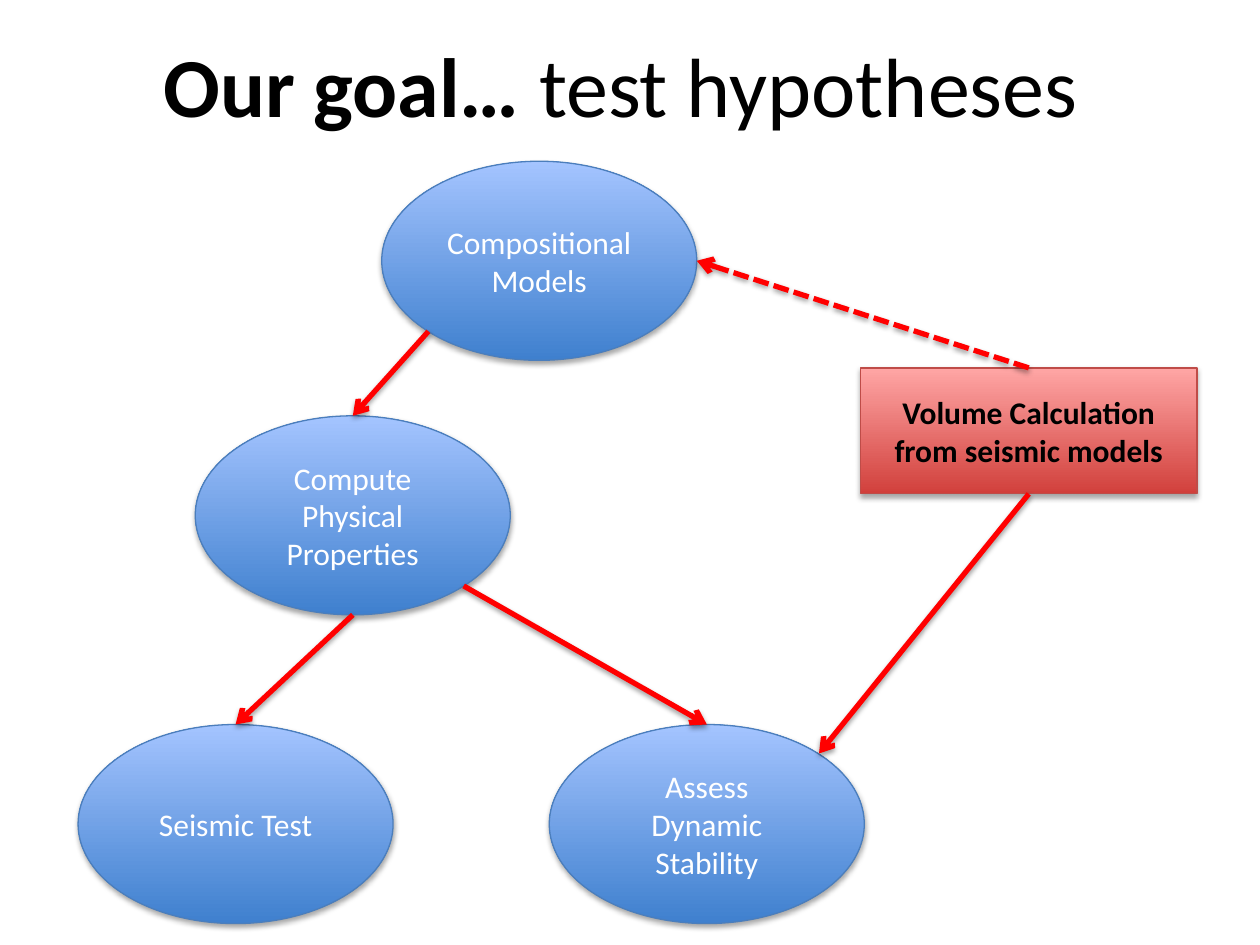
"""Build a slide with a flow chart of hypothesis testing."""
from dataclasses import dataclass
from typing import Optional

from pptx import Presentation, util as u
from pptx.dml.color import RGBColor
from pptx.enum import dml, shapes, text
from pptx.oxml import parse_xml
from pptx.oxml.ns import nsdecls

HUES = {"deep": "3F80CE", "pale": "A4C4FF", "edge": "4B7EBC",
        "brick": "D1403C", "rose": "FFA6A5", "rim": "BF4C48",
        "arrow": "FF0000", "white": "FFFFFF", "black": "000000"}
OVAL, BOX = shapes.MSO_SHAPE.OVAL, shapes.MSO_SHAPE.RECTANGLE


@dataclass
class Look:
    form: int
    size: tuple[float, float]
    grad: tuple[str, str]
    line: str
    font: dict


@dataclass
class Node:
    name: str
    words: str
    left: float
    top: float
    look: Look


@dataclass
class Link:
    start: tuple[float, float]
    stop: tuple[float, float]
    tail: Optional[tuple[str, int]] = None
    head: Optional[tuple[str, int]] = None
    dash: bool = False


STEP = Look(OVAL, (2.5, 1.58), ("deep", "pale"), "edge",
            {"size": u.Pt(18), "name": "Calibri", "bold": False, "hue": "white"})
NOTE = Look(BOX, (2.67, 1), ("brick", "rose"), "rim",
            {"size": u.Pt(18), "name": "Calibri", "bold": True, "hue": "black"})
HEAD = {"size": u.Pt(48), "name": "Calibri", "hue": "black"}

NODES = [
    Node("model", "Compositional\vModels", 3.03, 1.28, STEP),
    Node("props", "Compute Physical\nProperties", 1.55, 3.3, STEP),
    Node("assess", "Assess Dynamic Stability", 4.36, 5.75, STEP),
    Node("test", "Seismic Test", 0.62, 5.75, STEP),
    Node("volume", "Volume Calculation\nfrom seismic models", 6.83, 2.92, NOTE),
]
LINKS = [
    Link((3.4, 2.63), (2.8, 3.3), head=("props", 0)),
    Link((3.68, 4.65), (5.61, 5.75), head=("assess", 0)),
    Link((2.8, 4.88), (1.87, 5.75), head=("test", 0)),
    Link((8.17, 2.92), (5.53, 2.07), tail=("volume", 0), dash=True),
    Link((8.17, 3.92), (6.5, 5.98), tail=("volume", 2)),
]


def paint(hue: str) -> RGBColor:
    return RGBColor.from_string(HUES[hue])


def style(font, form: dict) -> None:
    for key, val in form.items():
        if key == "hue":
            font.color.rgb = paint(val)
        else:
            setattr(font, key, val)


def shade(item, dist: float, alpha: int) -> None:
    item._element.spPr.append(parse_xml(
        f'<a:effectLst {nsdecls("a")}><a:outerShdw blurRad="{u.Pt(3.1)}" '
        f'dist="{u.Pt(dist)}" dir="5400000" rotWithShape="0">'
        f'<a:srgbClr val="{HUES["black"]}"><a:alpha val="{alpha * 1000}"/>'
        '</a:srgbClr></a:outerShdw></a:effectLst>'))


def draw_node(slide, node: Node):
    look = node.look
    place = map(u.Inches, (node.left, node.top, *look.size))
    shape = slide.shapes.add_shape(look.form, *place)
    shape.fill.gradient()
    shape.fill.gradient_angle = 90
    for stop, hue, pos in zip(shape.fill.gradient_stops, look.grad, (0, 1)):
        stop.color.rgb, stop.position = paint(hue), pos
    shape.line.color.rgb = paint(look.line)
    shape.line.width = u.Pt(0.75)
    shade(shape, 1.8, 35)
    frame = shape.text_frame
    frame.text = node.words
    frame.word_wrap = True
    frame.vertical_anchor = text.MSO_ANCHOR.MIDDLE
    for para in frame.paragraphs:
        para.alignment = text.PP_ALIGN.CENTER
        for run in para.runs:
            style(run.font, look.font)
    return shape


def draw_link(slide, link: Link, made: dict) -> None:
    ends = map(u.Inches, (*link.start, *link.stop))
    wire = slide.shapes.add_connector(shapes.MSO_CONNECTOR.STRAIGHT, *ends)
    if link.tail:
        wire.begin_connect(made[link.tail[0]], link.tail[1])
    if link.head:
        wire.end_connect(made[link.head[0]], link.head[1])
    wire.line.color.rgb = paint("arrow")
    wire.line.width = u.Pt(3)
    if link.dash:
        wire.line.dash_style = dml.MSO_LINE.SQUARE_DOT
    wire.line._get_or_add_ln().append(
        parse_xml(f'<a:tailEnd {nsdecls("a")} type="arrow"/>'))
    shade(wire, 1.6, 38)


def draw_title(slide) -> None:
    title = slide.shapes.title
    for key, val in {"left": 0.5, "top": 0.26, "width": 9, "height": 0.82}.items():
        setattr(title, key, u.Inches(val))
    frame = title.text_frame
    frame.auto_size = text.MSO_AUTO_SIZE.NONE
    frame.vertical_anchor = text.MSO_ANCHOR.MIDDLE
    para = frame.paragraphs[0]
    para.alignment = text.PP_ALIGN.CENTER
    for words, bold in (("Our goal… ", True), ("test hypotheses ", False)):
        run = para.add_run()
        run.text = words
        style(run.font, {**HEAD, "bold": bold})


def main() -> None:
    deck = Presentation()
    deck.slide_width, deck.slide_height = u.Inches(10), u.Inches(7.5)
    slide = deck.slides.add_slide(deck.slide_layouts[5])
    draw_title(slide)
    made = {node.name: draw_node(slide, node) for node in NODES}
    for link in LINKS:
        draw_link(slide, link, made)
    deck.save("out.pptx")


if __name__ == "__main__":
    main()
